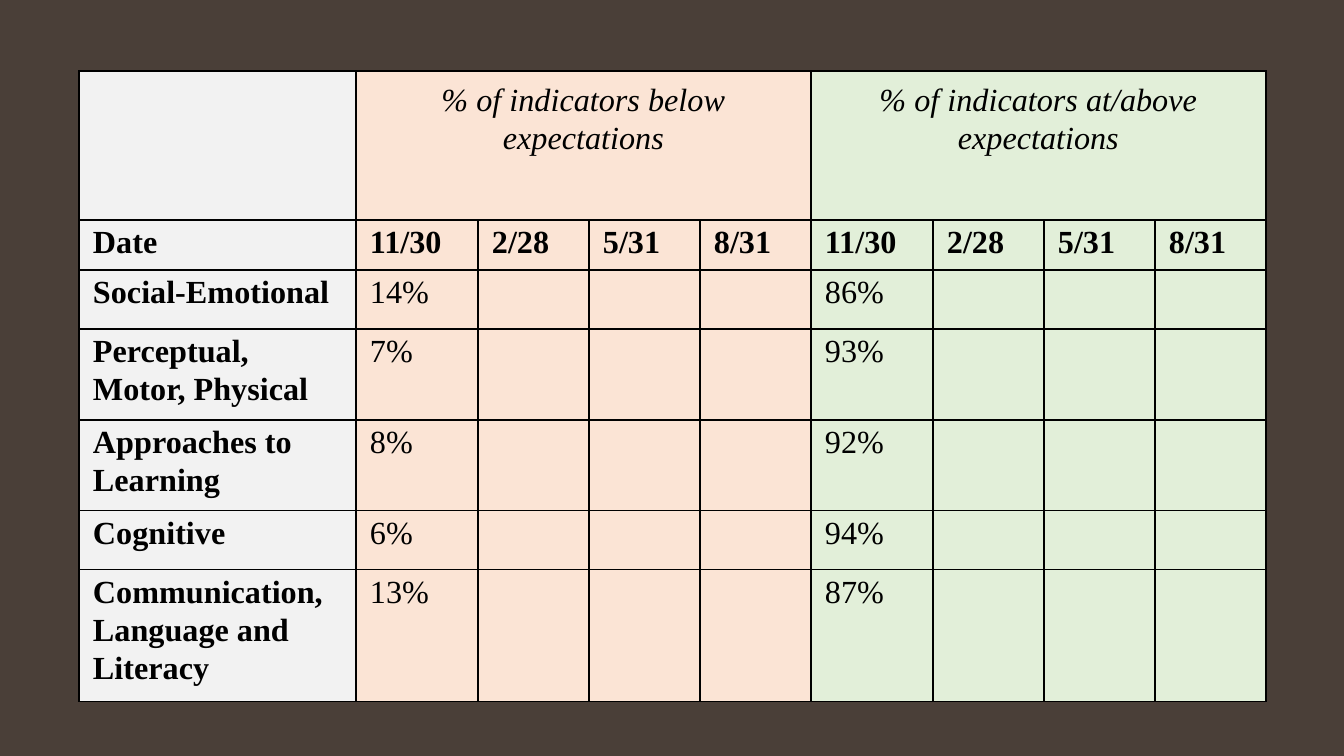
from lxml import etree
from pptx import Presentation
from pptx.dml.color import RGBColor
from pptx.enum import text
from pptx.oxml.ns import qn
from pptx.util import Pt

EMU_PER_PX = 12192000 / 1344


def px(length):
    return round(length * EMU_PER_PX)


def add_borders(cell):
    """Draw a thin black line on all four sides; runs before the cell's fill."""
    properties = cell._tc.get_or_add_tcPr()
    for side in ("a:lnL", "a:lnR", "a:lnT", "a:lnB"):
        line = etree.SubElement(properties, qn(side), w=str(Pt(1)))
        fill = etree.SubElement(line, qn("a:solidFill"))
        etree.SubElement(fill, qn("a:srgbClr"), val="000000")


GREY, PEACH, GREEN = "F2F2F2", "FBE4D5", "E2EFD9"
column_fills = [GREY] + [PEACH] * 4 + [GREEN] * 4
column_widths = [277] + [122, 111, 111, 111] * 2
row_heights = [149, 50, 59, 91, 91, 59, 132]

dates = ["11/30", "2/28", "5/31", "8/31"]
domains = [
    ("Social-Emotional", "14%", "86%"),
    ("Perceptual, Motor, Physical", "7%", "93%"),
    ("Approaches to Learning", "8%", "92%"),
    ("Cognitive", "6%", "94%"),
    ("Communication, Language and Literacy", "13%", "87%"),
]
later_dates = [""] * 3
content = [
    ["", "% of indicators below expectations", *later_dates,
     "% of indicators at/above expectations", *later_dates],
    ["Date"] + dates * 2,
]
for domain, below, above in domains:
    content.append([domain, below, *later_dates, above, *later_dates])

header_margins = {"margin_left": 19, "margin_top": 9, "margin_right": 19, "margin_bottom": 9}
body_margins = {"margin_left": 14, "margin_top": 2, "margin_right": 14, "margin_bottom": 0}

prs = Presentation()
prs.slide_width, prs.slide_height = px(1344), px(756)
slide = prs.slides.add_slide(prs.slide_layouts[6])
slide.background.fill.solid()
slide.background.fill.fore_color.rgb = RGBColor.from_string("4A3F38")

indicators = slide.shapes.add_table(
    len(row_heights), len(column_widths), px(79), px(71),
    px(sum(column_widths)), px(sum(row_heights))).table
for column, width in zip(indicators.columns, column_widths):
    column.width = px(width)
for row, height in zip(indicators.rows, row_heights):
    row.height = px(height)
for first in (1, 5):
    indicators.cell(0, first).merge(indicators.cell(0, first + 3))

for r, row in enumerate(content):
    for c, words in enumerate(row):
        cell = indicators.cell(r, c)
        add_borders(cell)
        cell.fill.solid()
        cell.fill.fore_color.rgb = RGBColor.from_string(column_fills[c])
        for side, margin in (header_margins if r == 0 else body_margins).items():
            setattr(cell, side, px(margin))
        if not words:
            continue
        cell.text = words
        paragraph = cell.text_frame.paragraphs[0]
        paragraph.line_spacing = 1.07
        paragraph.alignment = text.PP_ALIGN.CENTER if r == 0 else text.PP_ALIGN.LEFT
        font = paragraph.runs[0].font
        font_format = {"name": "Times New Roman", "size": Pt(23),
                       "italic": r == 0, "bold": r == 1 or c == 0}
        for attribute, value in font_format.items():
            setattr(font, attribute, value)
        font.color.rgb = RGBColor.from_string("000000")

prs.save("out.pptx")
